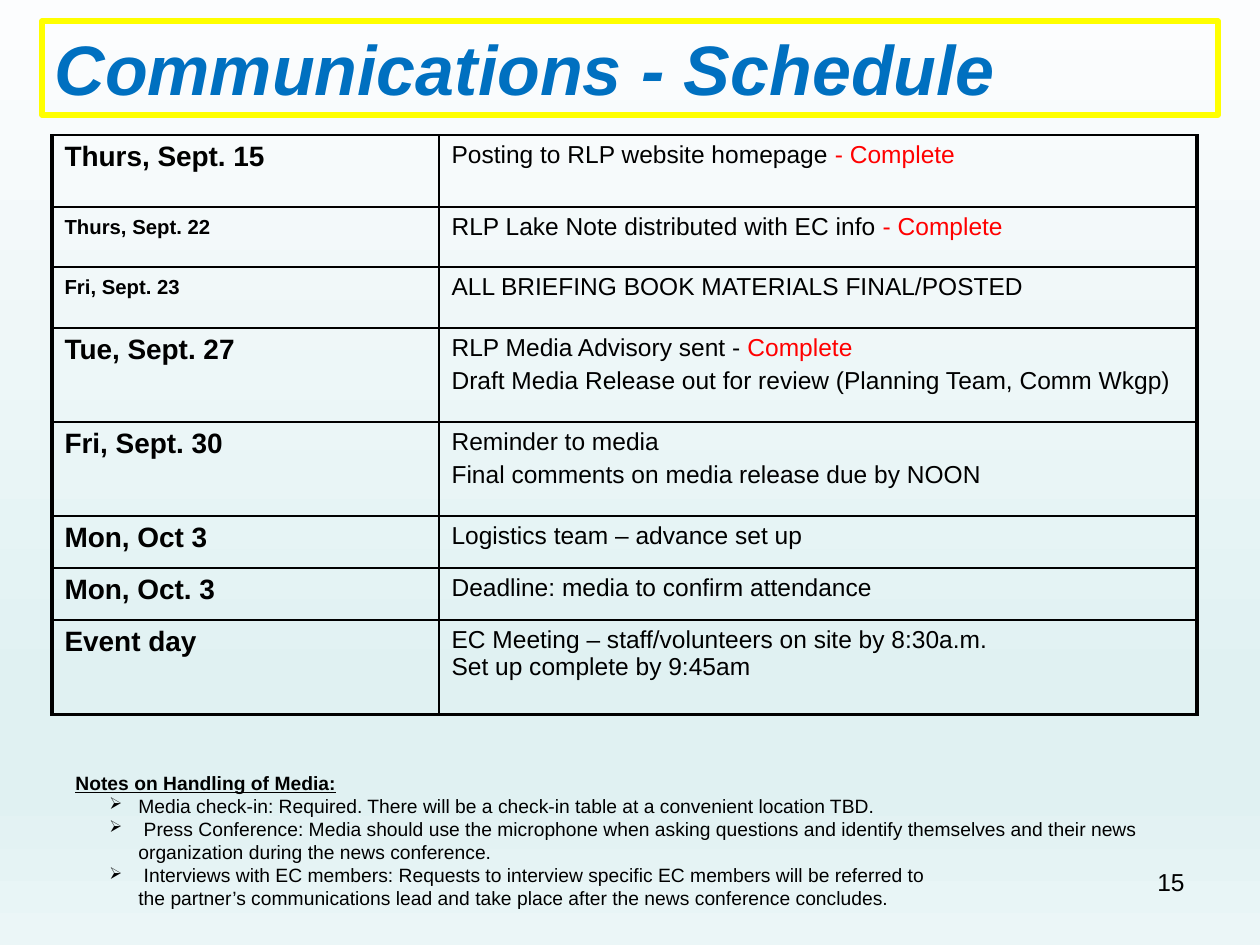
from copy import deepcopy
from dataclasses import dataclass

from lxml.etree import SubElement
from pptx import Presentation
from pptx.dml.color import RGBColor
from pptx.enum.text import MSO_ANCHOR, MSO_AUTO_SIZE, PP_ALIGN
from pptx.oxml.ns import qn
from pptx.util import Emu, Pt

PX_PER_INCH = 126
FONT = "Arial"
BLACK = RGBColor(0x00, 0x00, 0x00)
RED = RGBColor(0xFF, 0x00, 0x00)
BLUE = RGBColor(0x00, 0x70, 0xC0)
YELLOW = RGBColor(0xFF, 0xFF, 0x00)
SKY = (
    (0.0, RGBColor(0xFC, 0xFD, 0xFE)),
    (0.74, RGBColor(0xE0, 0xF1, 0xF2)),
    (0.83, RGBColor(0xE0, 0xF1, 0xF2)),
    (1.0, RGBColor(0xEB, 0xF6, 0xF7)),
)
THIN, THICK = Pt(1), Pt(2.25)


@dataclass(frozen=True)
class Task:
    text: str
    status: str = ""


@dataclass(frozen=True)
class Day:
    date: str
    height: int
    tasks: tuple[Task, ...]
    raised: bool = False


@dataclass(frozen=True)
class Note:
    text: str
    bullet: bool = True


SCHEDULE = (
    Day("Thurs, Sept. 15", 72, (Task("Posting to RLP website homepage ", "- Complete"),)),
    Day("Thurs, Sept. 22", 60,
        (Task("RLP Lake Note distributed with EC info ", "- Complete"),), raised=True),
    Day("Fri, Sept. 23", 61,
        (Task("ALL BRIEFING BOOK MATERIALS FINAL/POSTED"),), raised=True),
    Day("Tue, Sept. 27", 94, (
        Task("RLP Media Advisory sent - ", "Complete"),
        Task("Draft Media Release out for review (Planning Team, Comm Wkgp)"))),
    Day("Fri, Sept. 30", 94, (
        Task("Reminder to media"),
        Task("Final comments on media release due by NOON"))),
    Day("Mon, Oct 3", 52, (Task("Logistics team – advance set up"),)),
    Day("Mon, Oct. 3", 52, (Task("Deadline: media to confirm attendance"),)),
    Day("Event day", 95, (
        Task("EC Meeting – staff/volunteers on site by 8:30a.m.\nSet up complete by 9:45am"),)),
)
NOTES = (
    Note("Media check-in: Required. There will be a check-in table at a convenient location TBD."),
    Note(" Press Conference: Media should use the microphone when asking questions and identify "
         "themselves and their news organization during the news conference."),
    Note(" Interviews with EC members: Requests to interview specific EC members "
         "will be referred to"),
    Note("the partner’s communications lead and take place after the news conference concludes.",
         bullet=False),
)


def px(length: int) -> Emu:
    return Emu(round(length * 914400 / PX_PER_INCH))


def set_font(paragraph, size: int, color: RGBColor = BLACK, bold: bool = False) -> None:
    font = paragraph.font
    font.name, font.size, font.bold = FONT, Pt(size), bold
    font.color.rgb = color


def paint_background(slide) -> None:
    fill = slide.background.fill
    fill.gradient()
    fill.gradient_angle = 270
    stop_list = slide.element.find(".//" + qn("a:gsLst"))
    while len(stop_list) < len(SKY):
        stop_list.append(deepcopy(stop_list[0]))
    for stop, (position, color) in zip(fill.gradient_stops, SKY):
        stop.position = position
        stop.color.rgb = color


def add_heading(slide) -> None:
    title = slide.shapes.title
    title.left, title.top, title.width, title.height = px(42), px(21), px(1176), px(94)
    title.line.color.rgb = YELLOW
    title.line.width = Pt(3)
    frame = title.text_frame
    frame.text = "Communications - Schedule"
    frame.auto_size = MSO_AUTO_SIZE.NONE
    frame.vertical_anchor = MSO_ANCHOR.MIDDLE
    heading = frame.paragraphs[0]
    heading.alignment = PP_ALIGN.LEFT
    set_font(heading, 40, BLUE, bold=True)
    heading.font.italic = True


def add_text_frame(slide, left: int, top: int, width: int, height: int):
    frame = slide.shapes.add_textbox(px(left), px(top), px(width), px(height)).text_frame
    frame.word_wrap = True
    return frame


def finish_cell(cell, left: int, right: int, bottom: int) -> None:
    """Rule the four edges, then leave the cell unfilled."""
    properties = cell._tc.get_or_add_tcPr()
    for edge, width in (("L", left), ("R", right), ("T", THIN), ("B", bottom)):
        line = SubElement(properties, qn(f"a:ln{edge}"), w=str(int(width)))
        solid = SubElement(line, qn("a:solidFill"))
        SubElement(solid, qn("a:srgbClr"), val=str(BLACK))
    cell.fill.background()


def write_date(cell, day: Day) -> None:
    date = cell.text_frame.paragraphs[0]
    date.text = day.date
    set_font(date, 20 if day.raised else 16, bold=True)
    if day.raised:
        date.runs[0]._r.get_or_add_rPr().set("baseline", "30000")


def write_tasks(cell, tasks: tuple[Task, ...]) -> None:
    frame = cell.text_frame
    for index, task in enumerate(tasks):
        line = frame.add_paragraph() if index else frame.paragraphs[0]
        line.text = task.text
        set_font(line, 14)
        if index:
            line.space_before = Pt(3)
        if task.status:
            status = line.add_run()
            status.text = task.status
            status.font.color.rgb = RED


def add_schedule(slide) -> None:
    height = sum(day.height for day in SCHEDULE)
    table = slide.shapes.add_table(
        len(SCHEDULE), 2, px(52), px(135), px(1145), px(height)).table
    table.first_row = table.horz_banding = False
    table.columns[0].width, table.columns[1].width = px(387), px(758)
    for index, day in enumerate(SCHEDULE):
        table.rows[index].height = px(day.height)
        date_cell, task_cell = table.cell(index, 0), table.cell(index, 1)
        write_date(date_cell, day)
        write_tasks(task_cell, day.tasks)
        bottom = THICK if day is SCHEDULE[-1] else THIN
        finish_cell(date_cell, THICK, THIN, bottom)
        finish_cell(task_cell, THIN, THICK, bottom)


def add_notes(slide) -> None:
    frame = add_text_frame(slide, 63, 765, 1165, 152)
    heading = frame.paragraphs[0]
    heading.text = "Notes on Handling of Media:"
    set_font(heading, 11, bold=True)
    heading.font.underline = True
    for note in NOTES:
        line = frame.add_paragraph()
        line.text = note.text
        set_font(line, 11)
        properties = line._p.get_or_add_pPr()
        properties.set("marL", str(px(63)))
        properties.set("indent", str(px(-29) if note.bullet else 0))
        if note.bullet:
            # Bullet marks come before the default run properties
            size = SubElement(properties, qn("a:buSzPct"), val="85000")
            mark = SubElement(properties, qn("a:buChar"), char="➢")
            properties.insert(0, size)
            properties.insert(1, mark)


def add_page_number(slide) -> None:
    number = add_text_frame(slide, 903, 861, 294, 66).paragraphs[0]
    number.text = "15"
    number.alignment = PP_ALIGN.RIGHT
    set_font(number, 14)


def main() -> None:
    deck = Presentation()
    deck.slide_width, deck.slide_height = px(1260), px(945)
    slide = deck.slides.add_slide(deck.slide_layouts[5])
    paint_background(slide)
    add_heading(slide)
    add_page_number(slide)
    add_notes(slide)
    add_schedule(slide)
    deck.save("out.pptx")


if __name__ == "__main__":
    main()
